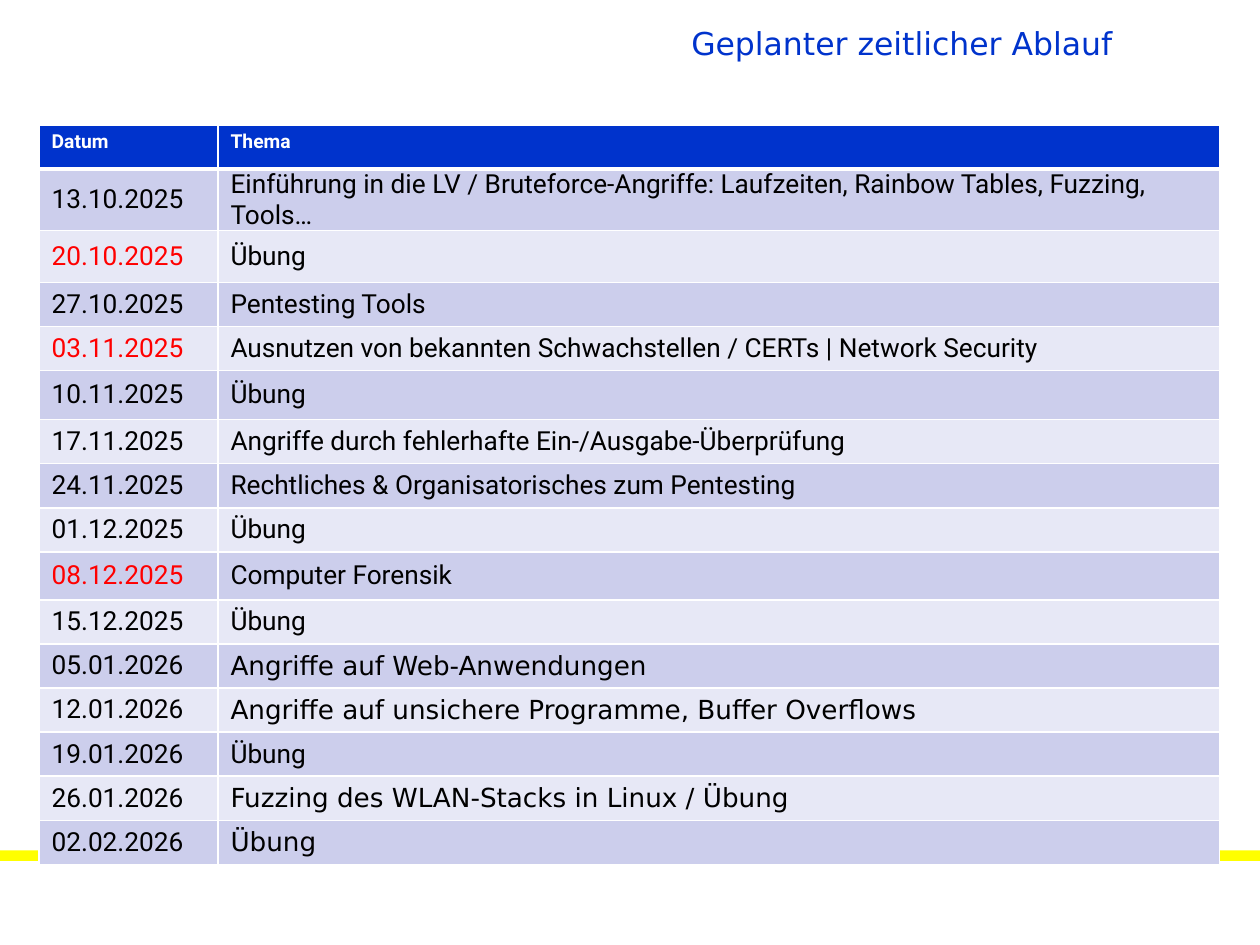
from dataclasses import dataclass

from lxml import etree
from pptx import Presentation
from pptx.dml.color import RGBColor
from pptx.enum.shapes import MSO_SHAPE
from pptx.enum.text import MSO_ANCHOR, PP_ALIGN
from pptx.oxml.ns import qn
from pptx.util import Inches, Pt

RECTANGLE = MSO_SHAPE.RECTANGLE
TOP, MIDDLE = MSO_ANCHOR.TOP, MSO_ANCHOR.MIDDLE
LEFT, RIGHT = PP_ALIGN.LEFT, PP_ALIGN.RIGHT
TITLE_ONLY = 5


@dataclass(frozen=True)
class Theme:
    blue: str = "0033CC"
    yellow: str = "FFFF00"
    white: str = "FFFFFF"
    black: str = "000000"
    red: str = "FF0000"
    bands: tuple = ("CCCEEC", "E7E8F6")
    body_font: str = "Roboto"
    accent_font: str = "DejaVu Sans"
    title_size: float = 18
    header_size: float = 11
    body_size: float = 15
    thin: float = 1
    thick: float = 3


THEME = Theme()
HEADINGS = ("Datum", "Thema")
SCHEDULE = (
    ("13.10.2025", "Einführung in die LV / Bruteforce-Angriffe: Laufzeiten, "
                   "Rainbow Tables, Fuzzing, Tools…"),
    ("20.10.2025", "Übung"),
    ("27.10.2025", "Pentesting Tools"),
    ("03.11.2025", "Ausnutzen von bekannten Schwachstellen / CERTs | Network Security"),
    ("10.11.2025", "Übung"),
    ("17.11.2025", "Angriffe durch fehlerhafte Ein-/Ausgabe-Überprüfung"),
    ("24.11.2025", "Rechtliches & Organisatorisches zum Pentesting"),
    ("01.12.2025", "Übung"),
    ("08.12.2025", "Computer Forensik"),
    ("15.12.2025", "Übung"),
    ("05.01.2026", "Angriffe auf Web-Anwendungen"),
    ("12.01.2026", "Angriffe auf unsichere Programme, Buffer Overflows"),
    ("19.01.2026", "Übung"),
    ("26.01.2026", "Fuzzing des WLAN-Stacks in Linux / Übung"),
    ("02.02.2026", "Übung"),
)
RED_DATES = {"20.10.2025", "03.11.2025", "08.12.2025"}
ACCENT_DATES = {"05.01.2026", "12.01.2026", "26.01.2026", "02.02.2026"}
COLUMN_SHARES = (0.142, 0.795)
ROW_SHARE = 0.0467
TALL_ROWS = {1: 0.064, 2: 0.0547, 5: 0.052, 9: 0.0507}


def write(frame, text, *, size, color, font=THEME.body_font, bold=False,
          align=LEFT):
    paragraph = frame.paragraphs[0]
    paragraph.alignment = align
    run = paragraph.add_run()
    run.text = text
    run.font.size = Pt(size)
    run.font.name = font
    run.font.bold = bold
    run.font.color.rgb = RGBColor.from_string(color)


class SlideBuilder:
    def __init__(self, deck, theme):
        self.deck = deck
        self.theme = theme
        self.slide = deck.slides.add_slide(deck.slide_layouts[TITLE_ONLY])

    def across(self, share):
        return round(self.deck.slide_width * share)

    def down(self, share):
        return round(self.deck.slide_height * share)

    def area(self, left, top, width, height):
        return (self.across(left), self.down(top),
                self.across(width), self.down(height))

    def title(self, text, *area):
        heading = self.slide.shapes.title
        heading.left, heading.top, heading.width, heading.height = self.area(*area)
        heading.text_frame.vertical_anchor = MIDDLE
        write(heading.text_frame, text, size=self.theme.title_size,
              color=self.theme.blue, font=self.theme.accent_font, align=RIGHT)

    def strip(self, color, *area):
        bar = self.slide.shapes.add_shape(RECTANGLE, *self.area(*area))
        bar.shadow.inherit = False
        bar.fill.solid()
        bar.fill.fore_color.rgb = RGBColor.from_string(color)
        bar.line.fill.background()

    def borders(self, cell, top, bottom):
        properties = cell._tc.get_or_add_tcPr()
        thin = self.theme.thin
        for side, width in (("L", thin), ("R", thin), ("T", top), ("B", bottom)):
            line = etree.SubElement(properties, qn(f"a:ln{side}"), w=str(Pt(width)))
            fill = etree.SubElement(line, qn("a:solidFill"))
            etree.SubElement(fill, qn("a:srgbClr"), val=self.theme.white)

    def cell(self, cell, text, fill, *, top, bottom, anchor, **text_format):
        self.borders(cell, top, bottom)
        cell.fill.solid()
        cell.fill.fore_color.rgb = RGBColor.from_string(fill)
        cell.vertical_anchor = anchor
        write(cell.text_frame, text, **text_format)

    def schedule(self, headings, entries, left, top):
        theme = self.theme
        heights = [TALL_ROWS.get(i, ROW_SHARE) for i in range(len(entries) + 1)]
        area = self.area(left, top, sum(COLUMN_SHARES), sum(heights))
        table = self.slide.shapes.add_table(
            len(heights), len(headings), *area).table
        for column, share in zip(table.columns, COLUMN_SHARES):
            column.width = self.across(share)
        for row, share in zip(table.rows, heights):
            row.height = self.down(share)

        for column, heading in enumerate(headings):
            self.cell(table.cell(0, column), heading, theme.blue,
                      top=theme.thin, bottom=theme.thick, anchor=TOP,
                      size=theme.header_size, color=theme.white, bold=True)

        for row, (date, topic) in enumerate(entries, start=1):
            date_color = theme.red if date in RED_DATES else theme.black
            topic_font = (theme.accent_font if date in ACCENT_DATES
                          else theme.body_font)
            formats = ((date, date_color, theme.body_font),
                       (topic, theme.black, topic_font))
            for column, (text, color, font) in enumerate(formats):
                cell = table.cell(row, column)
                cell.margin_top = cell.margin_bottom = 0
                self.cell(cell, text, theme.bands[(row - 1) % 2],
                          top=theme.thick if row == 1 else theme.thin,
                          bottom=theme.thin, anchor=MIDDLE,
                          size=theme.body_size, color=color, font=font)


def main():
    deck = Presentation()
    deck.slide_width, deck.slide_height = Inches(10), Inches(7.5)
    builder = SlideBuilder(deck, THEME)
    builder.title("Geplanter zeitlicher Ablauf", 0.033, 0, 0.86, 0.09)
    builder.strip(THEME.yellow, 0, 0.9, 1, 0.011)
    builder.schedule(HEADINGS, SCHEDULE, 0.031, 0.132)
    deck.save("out.pptx")


if __name__ == "__main__":
    main()
